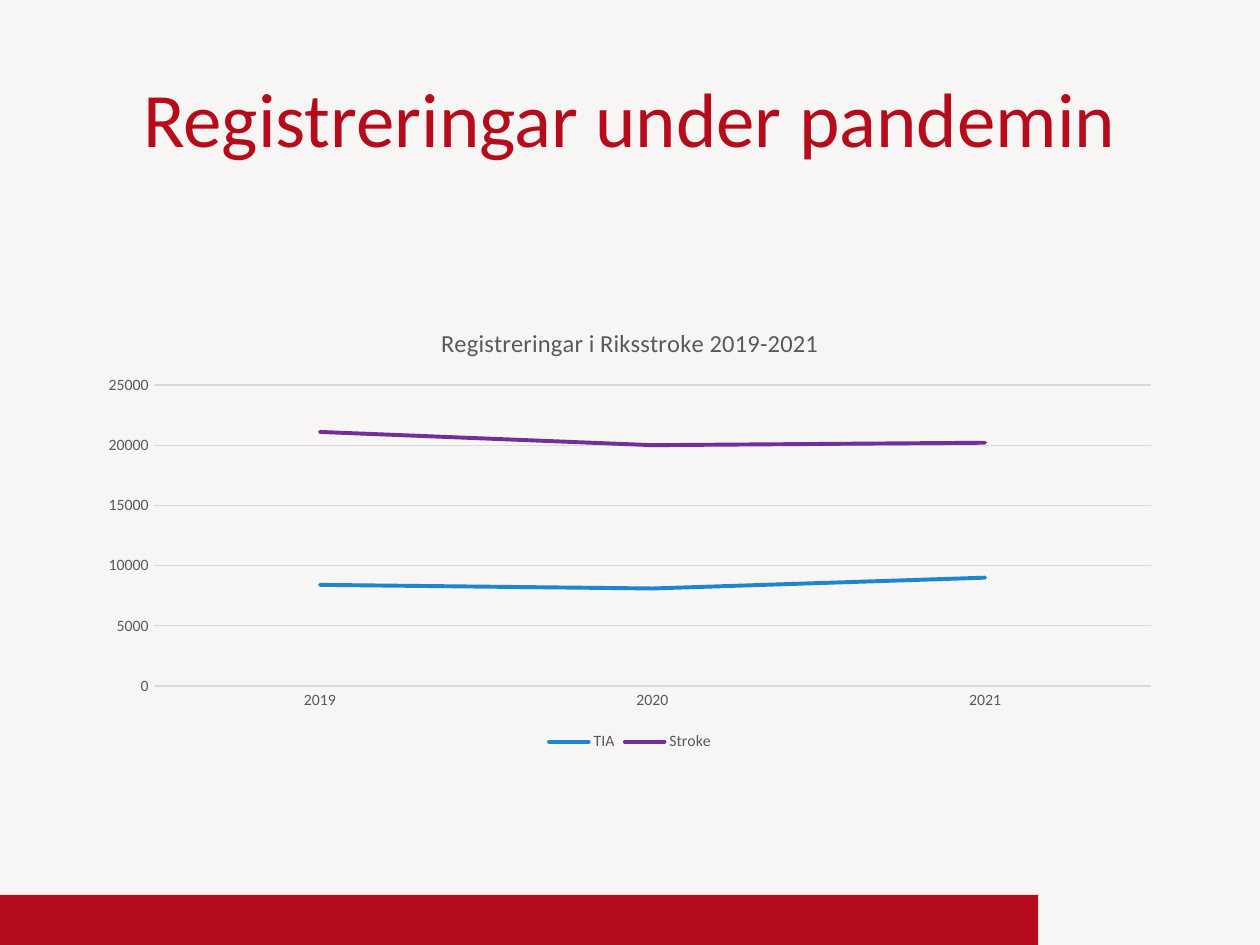
from pptx import Presentation
from pptx import util as u
from pptx.chart.data import CategoryChartData
from pptx.dml.color import RGBColor
from pptx.enum import chart as ch, shapes, text

HUES = {"back": "F7F6F4", "red": "B50B1B", "gray": "595959",
        "grid": "D9D9D9", "TIA": "1D86CD", "Stroke": "732E9A"}
DATA = {"TIA": (8400, 8100, 9000), "Stroke": (21100, 20000, 20200)}
YEARS = ("2019", "2020", "2021")
FACE = "Calibri"
WIDE, HIGH = u.Inches(10), u.Inches(7.5)


def hue(name):
    return RGBColor.from_string(HUES[name])


def area(left, top, width, height):
    """Turn shares of the slide into a box."""
    return [round(v) for v in (left * WIDE, top * HIGH, width * WIDE, height * HIGH)]


def style(font, size, name):
    font.name, font.size, font.bold = FACE, u.Pt(size), False
    font.color.rgb = hue(name)


def rule(line, name, width):
    line.color.rgb = hue(name)
    line.width = u.Pt(width)


def add_band(slide, box):
    band = slide.shapes.add_shape(shapes.MSO_SHAPE.RECTANGLE, *box)
    band.shadow.inherit = False
    band.fill.solid()
    band.fill.fore_color.rgb = hue("red")
    band.line.fill.background()


def add_title(slide, box, words):
    title = slide.shapes.title
    title.left, title.top, title.width, title.height = box
    frame = title.text_frame
    frame.text = words
    frame.vertical_anchor = text.MSO_ANCHOR.MIDDLE
    para = frame.paragraphs[0]
    para.alignment = text.PP_ALIGN.CENTER
    style(para.font, 44, "red")


def add_trend(slide, box, words):
    data = CategoryChartData()
    data.categories = YEARS
    for name, vals in DATA.items():
        data.add_series(name, vals)
    chart = slide.shapes.add_chart(ch.XL_CHART_TYPE.LINE, *box, data).chart
    style(chart.font, 9, "gray")

    # Heading and legend
    chart.has_title = True
    chart.chart_title.include_in_layout = False
    frame = chart.chart_title.text_frame
    frame.text = words
    style(frame.paragraphs[0].font, 14, "gray")
    chart.has_legend = True
    chart.legend.position = ch.XL_LEGEND_POSITION.BOTTOM
    chart.legend.include_in_layout = False
    style(chart.legend.font, 9, "gray")

    # Axes
    for axis in (chart.category_axis, chart.value_axis):
        axis.major_tick_mark = axis.minor_tick_mark = ch.XL_TICK_MARK.NONE
        style(axis.tick_labels.font, 9, "gray")
    rule(chart.category_axis.format.line, "grid", 0.75)
    scale = chart.value_axis
    scale.minimum_scale, scale.maximum_scale, scale.major_unit = 0, 25000, 5000
    scale.format.line.fill.background()
    scale.has_major_gridlines = True
    rule(scale.major_gridlines.format.line, "grid", 0.75)

    # Lines with round ends
    plot = chart.plots[0]
    plot.vary_by_categories = False
    for item in plot.series:
        item.smooth = False
        item.marker.style = ch.XL_MARKER_STYLE.NONE
        rule(item.format.line, item.name, 2.25)
        for line in item._element.xpath("c:spPr/a:ln"):
            line.set("cap", "rnd")


def main():
    deck = Presentation()
    deck.slide_width, deck.slide_height = WIDE, HIGH
    slide = deck.slides.add_slide(deck.slide_layouts[5])
    slide.background.fill.solid()
    slide.background.fill.fore_color.rgb = hue("back")
    add_band(slide, area(0, 0.947, 0.824, 0.053))
    add_title(slide, area(0.05, 0.04, 0.9, 0.167), "Registreringar under pandemin")
    add_trend(slide, area(0.069, 0.324, 0.862, 0.476),
              "Registreringar i Riksstroke 2019-2021")
    deck.save("out.pptx")


if __name__ == "__main__":
    main()
